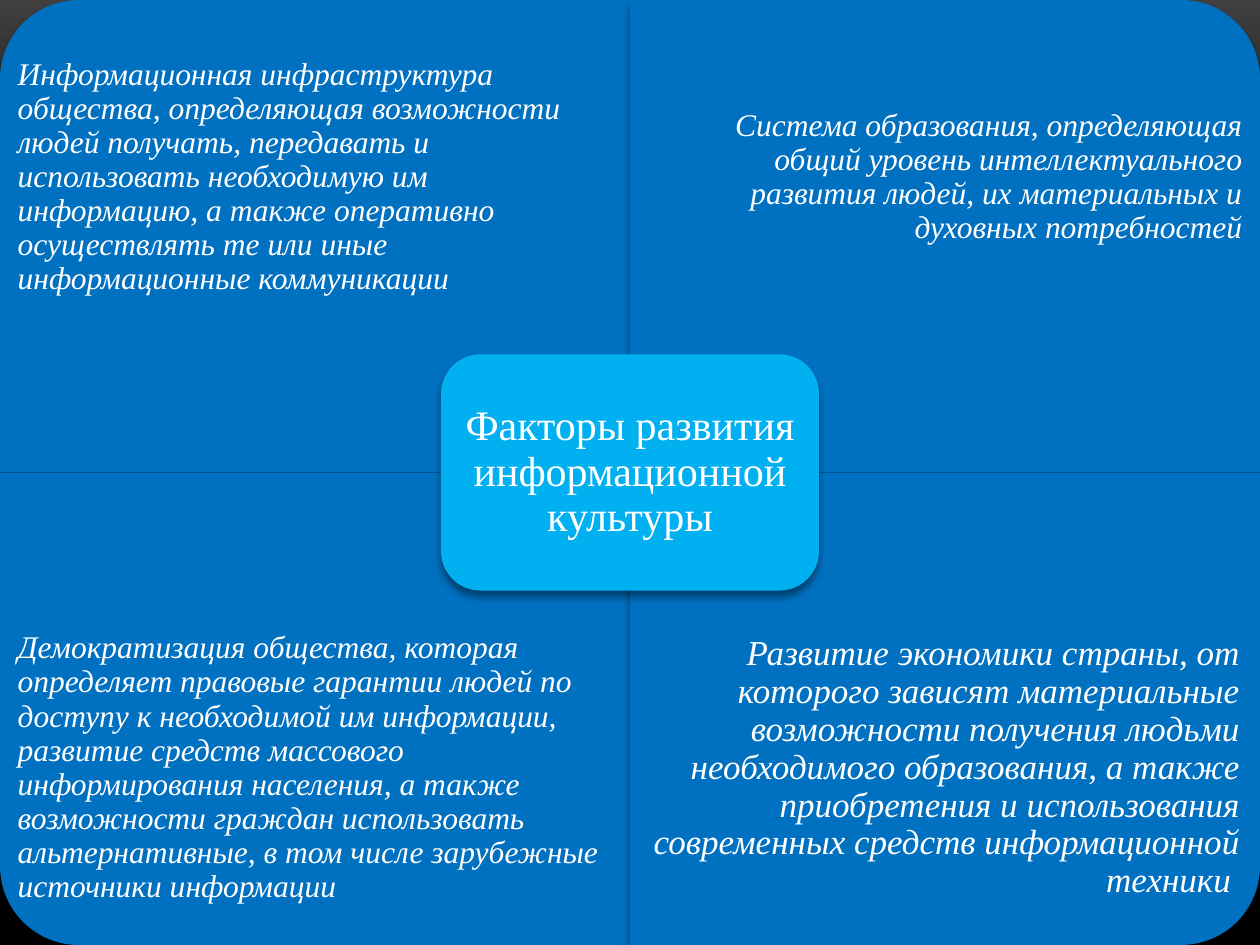
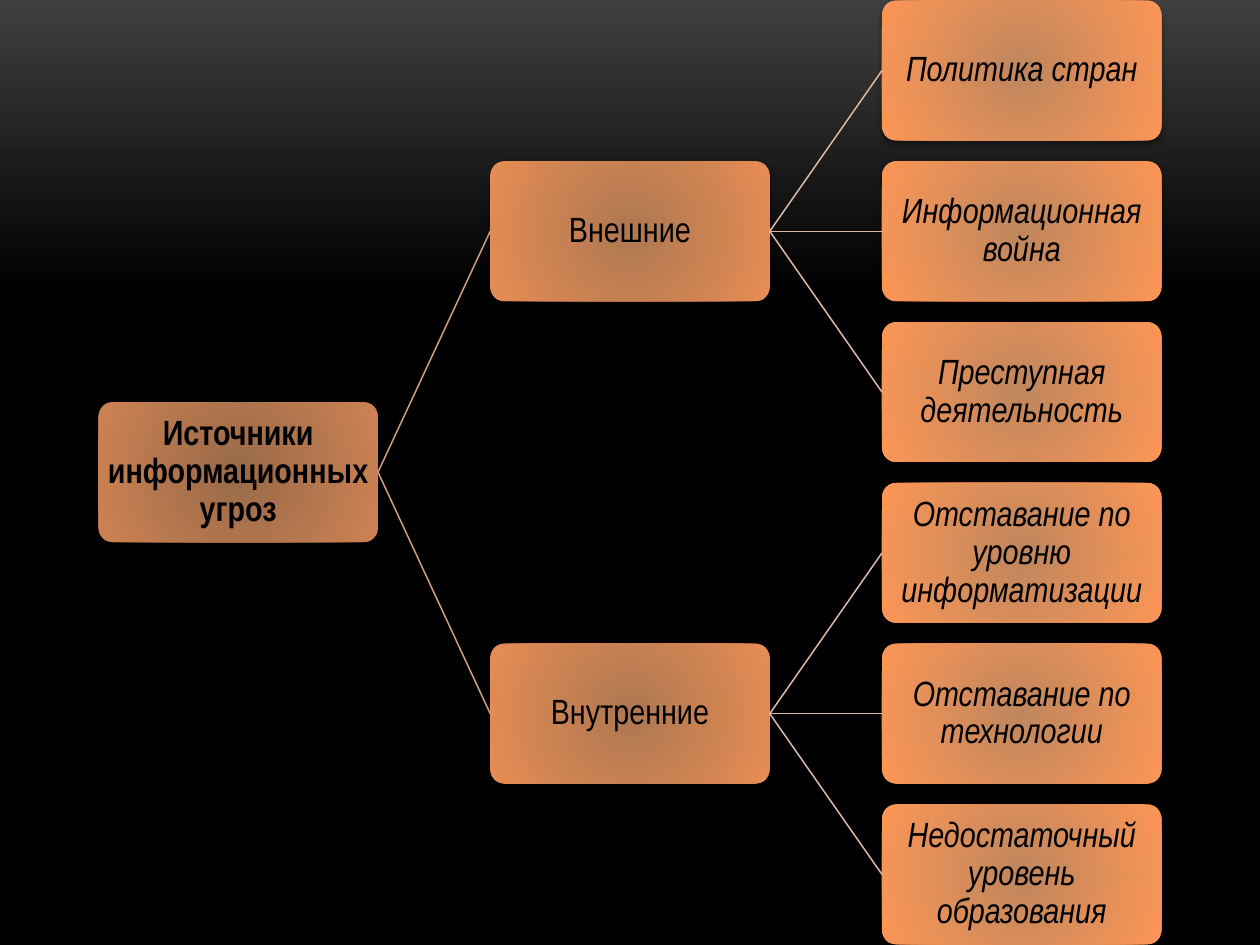
from lxml import etree
from pptx import Presentation, util as u
from pptx.dml.color import RGBColor
from pptx.enum import shapes, text
from pptx.oxml import parse_xml
from pptx.oxml.ns import nsdecls, qn

PX = 914400 // 192
W, H = 1920, 1440
rgb = RGBColor.from_string
SHAPE, ALIGN = shapes.MSO_SHAPE, text.PP_ALIGN


def add_block(s, kind, x, y, w, h, blur=4, dist=3.4):
    """Add an unfilled, borderless shape with a soft shadow below (points)."""
    sp = s.shapes.add_shape(kind, x * PX, y * PX, w * PX, h * PX)
    sp.line.fill.background()
    sp.shadow.inherit = False
    sp._element.spPr.find(qn("a:effectLst")).append(parse_xml(
        f'<a:outerShdw {nsdecls("a")} blurRad="{u.Pt(blur)}" dist="{u.Pt(dist)}"'
        ' dir="5400000" rotWithShape="0"><a:srgbClr val="000000">'
        '<a:alpha val="40000"/></a:srgbClr></a:outerShdw>'))
    return sp


def write(sp, words, font, size, color, inset, align=ALIGN.CENTER, bold=False, italic=False):
    tf = sp.text_frame
    tf.word_wrap = True
    tf.vertical_anchor = text.MSO_ANCHOR.MIDDLE
    tf.margin_left = tf.margin_top = tf.margin_right = tf.margin_bottom = inset * PX
    p = tf.paragraphs[0]
    p.alignment = align
    p.line_spacing = 0.9
    r = p.add_run()
    r.text = words
    r.font.name, r.font.size = font, u.Pt(size)
    r.font.bold, r.font.italic = bold, italic
    r.font.color.rgb = rgb(color)


prs = Presentation()
prs.slide_width, prs.slide_height = W * PX, H * PX
for _ in range(2):
    s = prs.slides.add_slide(prs.slide_layouts[6])
    fill = s.background.fill
    fill.gradient()
    fill.gradient_angle = 270
    top, bottom = fill.gradient_stops
    top.color.rgb, bottom.color.rgb = rgb("3F3F3F"), rgb("000000")
    bottom.position = 0.31
factors_slide, threats_slide = prs.slides

# Factors: four quadrants, each with its rounded corner outwards
SERIF = "Times New Roman"
QW, QH, TEXT_H = W // 2, H // 2, 540
factors = [  # column, row, rotation, size, inset, words
    (0, 0, 270, 18, 27,
     "Информационная инфраструктура общества, определяющая возможности людей получать, "
     "передавать и использовать необходимую им информацию, а также оперативно "
     "осуществлять те или иные информационные коммуникации"),
    (1, 0, 0, 18, 27,
     "Система образования, определяющая общий уровень интеллектуального развития людей, "
     "их материальных и духовных потребностей"),
    (0, 1, 180, 18, 27,
     "Демократизация общества, которая определяет правовые гарантии людей по доступу к "
     "необходимой им информации, развитие средств массового информирования населения, "
     "а также возможности граждан использовать альтернативные, в том числе зарубежные "
     "источники информации"),
    (1, 1, 90, 20, 31,
     "Развитие экономики страны, от которого зависят материальные возможности получения "
     "людьми необходимого образования, а также приобретения и использования современных "
     "средств информационной техники "),
]
for col, row, rotation, size, inset, words in factors:
    x, y = col * QW, row * QH
    w, h = (QH, QW) if rotation % 180 else (QW, QH)
    sp = add_block(factors_slide, SHAPE.ROUND_1_RECTANGLE,
                   x + (QW - w) // 2, y + (QH - h) // 2, w, h)
    sp.rotation = rotation
    sp.fill.solid()
    sp.fill.fore_color.rgb = rgb("0070C0")
    tb = factors_slide.shapes.add_textbox(
        x * PX, row * (H - TEXT_H) * PX, QW * PX, TEXT_H * PX)
    write(tb, words, SERIF, size, "FFFFFF", inset,
          ALIGN.RIGHT if col else ALIGN.LEFT, italic=True)

center = add_block(factors_slide, SHAPE.ROUNDED_RECTANGLE, 672, 540, 576, 360)
center.fill.solid()
center.fill.fore_color.rgb = rgb("00B0F0")
write(center, "Факторы развития информационной культуры", SERIF, 24, "FFFFFF", 19)

# Threats: a tree of three levels growing to the right
BOX_W, BOX_H, COL_STEP, ROW_STEP = 426, 213, 597, 245
levels = [  # inner and outer colour, shadow blur and distance
    ("986A48", "CE8253", 4, 3.4),
    ("AD7851", "E78C53", 3, 2),
    ("BF865D", "FC9656", 3, 2),
]
LINKS = {1: "D29E7D", 2: "DDBAA6"}
nodes = [  # level, row, parent, words
    (0, 2.5, None, "Источники информационных угроз"),
    (1, 1, 0, "Внешние"),
    (2, 0, 1, "Политика стран"),
    (2, 1, 1, "Информационная война"),
    (2, 2, 1, "Преступная деятельность"),
    (1, 4, 0, "Внутренние"),
    (2, 3, 5, "Отставание по уровню информатизации"),
    (2, 4, 5, "Отставание по технологии"),
    (2, 5, 5, "Недостаточный уровень образования"),
]
boxes = []
for level, row, parent, words in nodes:
    inner, outer, blur, dist = levels[level]
    sp = add_block(threats_slide, SHAPE.ROUNDED_RECTANGLE, 150 + level * COL_STEP,
                   1 + int(row * ROW_STEP), BOX_W, BOX_H, blur, dist)
    sp.adjustments[0] = 0.1
    sp.fill.gradient()
    for stop, color in zip(sp.fill.gradient_stops, (inner, outer)):
        stop.color.rgb = rgb(color)
    lin = sp._element.spPr.find(qn("a:gradFill")).find(qn("a:lin"))
    radial = etree.Element(qn("a:path"), path="circle")
    etree.SubElement(radial, qn("a:fillToRect"), {side: "100000" for side in "ltrb"})
    lin.getparent().replace(lin, radial)
    write(sp, words, "Arial Narrow", 20, "000000", 2, bold=level == 0, italic=level == 2)
    boxes.append(sp)
    if parent is not None:
        link = threats_slide.shapes.add_connector(shapes.MSO_CONNECTOR.STRAIGHT, 0, 0, 0, 0)
        link.begin_connect(boxes[parent], 3)
        link.end_connect(sp, 1)
        link.line.color.rgb = rgb(LINKS[level])
        link.line.width = u.Pt(0.85)
        etree.SubElement(link._element.spPr, qn("a:effectLst"))

prs.save("out.pptx")
